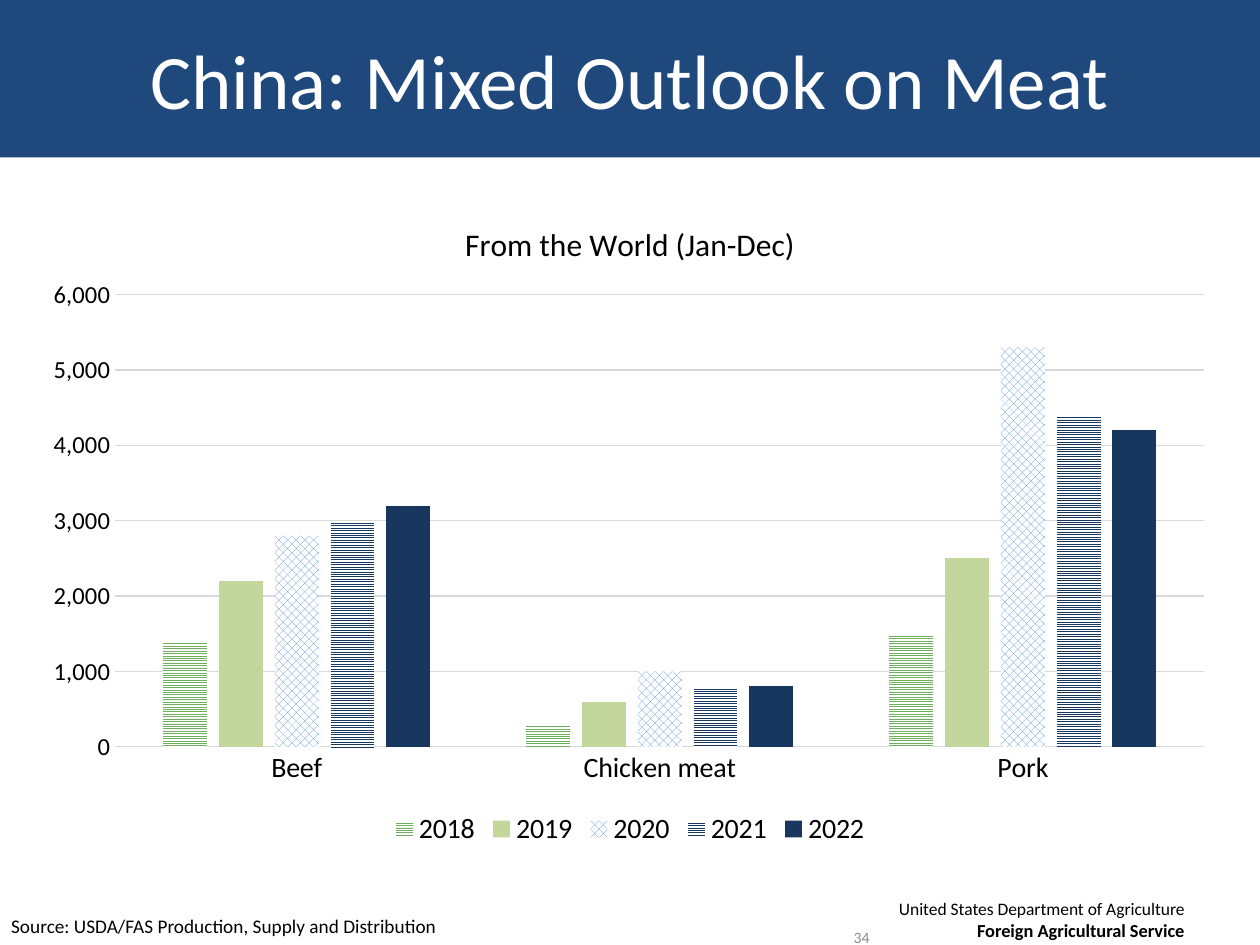
from dataclasses import dataclass
from lxml.etree import SubElement
from pptx import Presentation
from pptx.chart.data import CategoryChartData as Data
from pptx.dml.color import RGBColor as Rgb
from pptx.enum.chart import XL_CHART_TYPE as Kind, XL_LEGEND_POSITION as Side, XL_TICK_MARK as Tick
from pptx.enum.dml import MSO_PATTERN as Pat
from pptx.enum.text import MSO_ANCHOR as Anchor, PP_ALIGN as Align
from pptx.oxml.ns import qn
from pptx.util import Inches, Pt


@dataclass(frozen=True)
class Theme:
    face: str = "Calibri"
    band: str = "1F497D"
    white: str = "FFFFFF"
    black: str = "000000"
    gray: str = "8C8C8C"
    grid: str = "D9D9D9"
    green: str = "6FAE5E"
    lime: str = "C3D69B"
    sky: str = "558ED5"
    navy: str = "17375E"
    head: float = 44
    chart: float = 18
    label: float = 16
    scale: float = 14
    note: float = 11
    bold: float = 10.5
    small: float = 10
    page: float = 9


THEME = Theme()
CATS = ["Beef", "Chicken meat", "Pork"]
SERIES = [
    ("2018", (1400, 300, 1500), THEME.green, Pat.NARROW_HORIZONTAL),
    ("2019", (2200, 600, 2500), THEME.lime, None),
    ("2020", (2800, 1000, 5300), THEME.sky, Pat.PERCENT_50),
    ("2021", (3000, 800, 4400), THEME.navy, Pat.NARROW_HORIZONTAL),
    ("2022", (3200, 800, 4200), THEME.navy, None),
]


def tint(code):
    return Rgb.from_string(code)


def style(font, size, color=THEME.black, bold=False):
    font.name = THEME.face
    font.size = Pt(size)
    font.bold = bold
    font.color.rgb = tint(color)


def write(para, text, size, color=THEME.black, bold=False):
    run = para.add_run()
    run.text = text
    style(run.font, size, color, bold)


def add_title(slide, box):
    title = slide.shapes.title
    title.left, title.top, title.width, title.height = map(Inches, box)
    title.fill.solid()
    title.fill.fore_color.rgb = tint(THEME.band)
    frame = title.text_frame
    frame.vertical_anchor = Anchor.MIDDLE
    para = frame.paragraphs[0]
    para.alignment = Align.CENTER
    write(para, "China: Mixed Outlook on Meat", THEME.head, THEME.white)


def add_text(slide, box, lines, align=Align.LEFT, anchor=Anchor.TOP):
    frame = slide.shapes.add_textbox(*map(Inches, box)).text_frame
    frame.word_wrap = True
    frame.vertical_anchor = anchor
    for index, line in enumerate(lines):
        para = frame.add_paragraph() if index else frame.paragraphs[0]
        para.alignment = align
        write(para, *line)


def paint(fill, color, pattern):
    if pattern is None:
        fill.solid()
    else:
        fill.patterned()
        fill.pattern = pattern
        fill.back_color.rgb = tint(THEME.white)
    fill.fore_color.rgb = tint(color)


def rule(line):
    line.color.rgb = tint(THEME.grid)
    line.width = Pt(0.75)


def set_plot(chart, x, y, w, h):
    area = chart.element.find(".//" + qn("c:plotArea"))
    for old in area.findall(qn("c:layout")):
        area.remove(old)
    layout = SubElement(area, qn("c:layout"))
    area.insert(0, layout)
    manual = SubElement(layout, qn("c:manualLayout"))
    parts = {"layoutTarget": "inner", "xMode": "edge", "yMode": "edge",
             "x": x, "y": y, "w": w, "h": h}
    for name, value in parts.items():
        SubElement(manual, qn("c:" + name)).set("val", str(value))


def add_bars(slide, box):
    data = Data(number_format="#,##0")
    data.categories = CATS
    for name, vals, *_ in SERIES:
        data.add_series(name, vals)
    chart = slide.shapes.add_chart(Kind.COLUMN_CLUSTERED, *map(Inches, box), data).chart
    style(chart.font, THEME.label)
    chart.has_title = True
    write(chart.chart_title.text_frame.paragraphs[0], "From the World (Jan-Dec)", THEME.chart)
    chart.has_legend = True
    chart.legend.position = Side.BOTTOM
    chart.legend.include_in_layout = False
    style(chart.legend.font, THEME.label)
    plot = chart.plots[0]
    plot.vary_by_categories = False
    plot.gap_width, plot.overlap = 219, -27
    for series, (_, _, color, pattern) in zip(plot.series, SERIES):
        paint(series.format.fill, color, pattern)
    cat, val = chart.category_axis, chart.value_axis
    for axis, size in ((cat, THEME.label), (val, THEME.scale)):
        axis.major_tick_mark = axis.minor_tick_mark = Tick.NONE
        style(axis.tick_labels.font, size)
    rule(cat.format.line)
    rule(val.major_gridlines.format.line)
    val.format.line.fill.background()
    val.minimum_scale, val.maximum_scale, val.major_unit = 0, 6000, 1000
    val.tick_labels.number_format = "#,##0"
    val.tick_labels.number_format_is_linked = False
    set_plot(chart, 0.07, 0.15, 0.91, 0.69)


def add_foot(slide):
    add_text(slide, (6.92, 7.08, 2.58, 0.45), [
        ("United States Department of Agriculture", THEME.small),
        ("Foreign Agricultural Service", THEME.bold, THEME.black, True),
    ], Align.RIGHT)
    add_text(slide, (-0.01, 7.21, 4.17, 0.29), [
        ("Source: USDA/FAS Production, Supply and Distribution", THEME.note),
    ])
    add_text(slide, (6.42, 7.21, 0.58, 0.45), [("34", THEME.page, THEME.gray)],
             Align.RIGHT, Anchor.MIDDLE)


def main():
    deck = Presentation()
    deck.slide_width, deck.slide_height = Inches(10), Inches(7.5)
    slide = deck.slides.add_slide(deck.slide_layouts[5])
    add_title(slide, (0, 0, 10, 1.25))
    add_bars(slide, (0.25, 1.56, 9.5, 5.2))
    add_foot(slide)
    deck.save("out.pptx")


if __name__ == "__main__":
    main()
